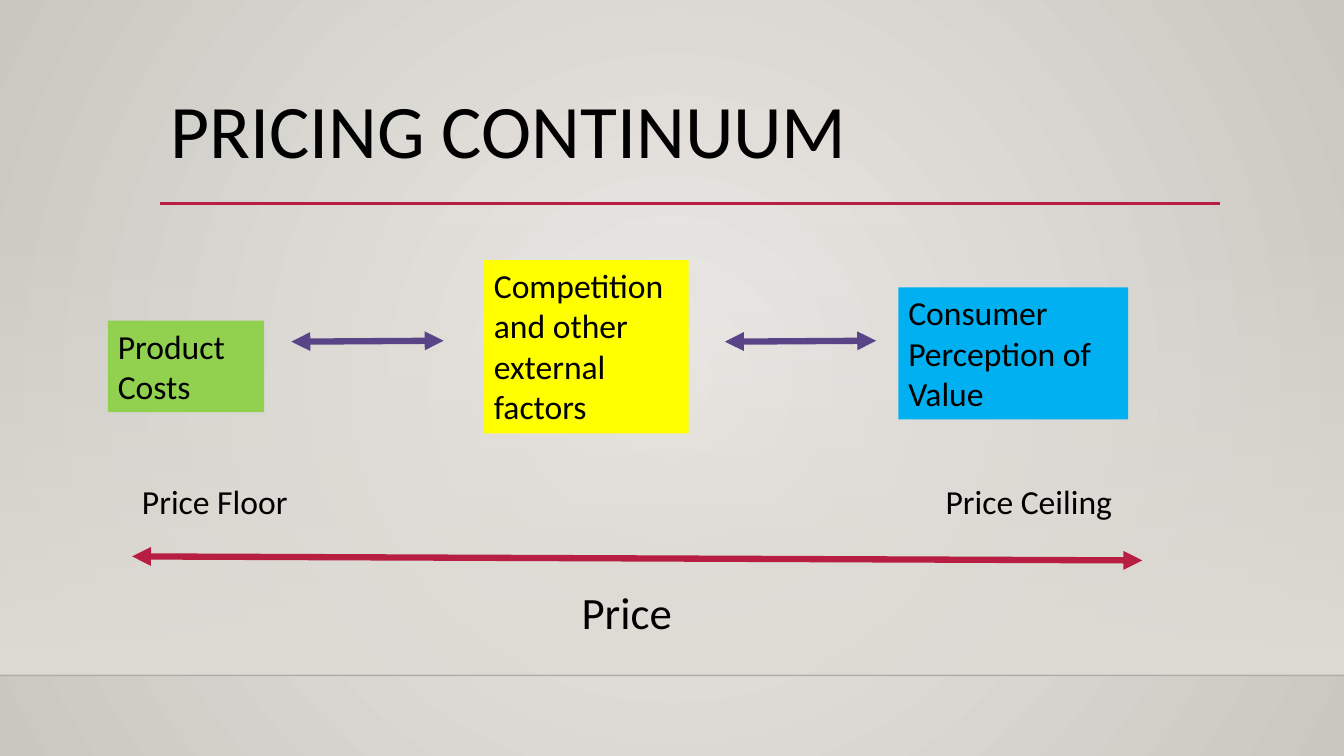
from dataclasses import dataclass

from lxml import etree
from pptx import Presentation
from pptx.dml.color import RGBColor as Rgb
from pptx.enum.shapes import MSO_CONNECTOR as Link, MSO_SHAPE as Kind
from pptx.enum.text import MSO_ANCHOR as Anchor, PP_ALIGN as Align
from pptx.oxml import parse_xml
from pptx.oxml.ns import nsdecls, qn
from pptx.util import Inches, Pt

WIDE, HIGH, FLOOR = 13.33, 7.5, 6.7
RED, PURPLE, BLACK = "B71E42", "594487", "000000"


@dataclass
class Label:
    text: str
    left: float
    top: float
    width: float
    height: float
    fill: str | None = None
    size: float = 24
    space: float = 1.0


@dataclass
class Line:
    start: tuple[float, float]
    end: tuple[float, float]
    color: str
    weight: float
    heads: bool = False
    alpha: int = 100


LABELS = [
    Label("PRICING CONTINUUM", 1.59, 0.88, 10.5, 1.15, size=54, space=0.9),
    Label("Product\nCosts", 1.07, 3.18, 1.55, 0.91, "92D050"),
    Label("Consumer\nPerception of\nValue", 8.91, 2.85, 2.28, 1.31, "00B0F0"),
    Label("Competition\nand other\nexternal\nfactors", 4.8, 2.58, 2.03, 1.72, "FFFF00"),
    Label("Price Floor", 1.31, 4.72, 1.72, 0.5),
    Label("Price Ceiling", 9.28, 4.72, 1.91, 0.5),
    Label("Price", 5.67, 5.75, 1.12, 0.64, size=32),
]
LINES = [
    Line((0, FLOOR), (WIDE, FLOOR), "000001", 1, alpha=20),
    Line((1.59, 2.02), (12.1, 2.02), RED, 2.5),
    Line((2.89, 3.39), (4.4, 3.38), PURPLE, 4.5, True),
    Line((7.19, 3.39), (8.69, 3.38), PURPLE, 4.5, True),
    Line((1.31, 5.52), (11.33, 5.56), RED, 4.5, True),
]


def color(code: str) -> Rgb:
    return Rgb.from_string(code)


def blend(owner, stops: list[tuple[str, int]], shade: str) -> None:
    marks = "".join(
        f'<a:gs pos="{pos}"><a:srgbClr val="{code}"><a:alpha val="{alpha * 1000}"/>'
        "</a:srgbClr></a:gs>"
        for pos, (code, alpha) in zip((0, 100000), stops)
    )
    grad = parse_xml(
        f'<a:gradFill {nsdecls("a")} rotWithShape="1"><a:gsLst>{marks}</a:gsLst>{shade}</a:gradFill>'
    )
    owner.replace(owner.find(qn("a:solidFill")), grad)


def block(slide, left: float, top: float, width: float, height: float, fill: str):
    shape = slide.shapes.add_shape(
        Kind.RECTANGLE, Inches(left), Inches(top), Inches(width), Inches(height)
    )
    shape.shadow.inherit = False
    shape.fill.solid()
    shape.fill.fore_color.rgb = color(fill)
    shape.line.fill.background()
    return shape


def write(frame, text: str, *, size: float, space: float = 1.0) -> None:
    frame.word_wrap = True
    frame.vertical_anchor = Anchor.TOP
    frame.text = text
    for para in frame.paragraphs:
        para.alignment = Align.LEFT
        para.line_spacing = space
        para.font.name = "Calibri"
        para.font.size = Pt(size)
        para.font.color.rgb = color(BLACK)


def place(slide, label: Label) -> None:
    area = label.left, label.top, label.width, label.height
    if label.fill:
        shape = block(slide, *area, label.fill)
    else:
        shape = slide.shapes.add_textbox(*map(Inches, area))
    write(shape.text_frame, label.text, size=label.size, space=label.space)


def draw(slide, line: Line) -> None:
    ends = map(Inches, line.start + line.end)
    link = slide.shapes.add_connector(Link.STRAIGHT, *ends)
    link.line.width = Pt(line.weight)
    link.line.color.rgb = color(line.color)
    props = link.element.spPr
    stroke = props.find(qn("a:ln"))
    if line.alpha < 100:
        tint = stroke.find(".//" + qn("a:srgbClr"))
        etree.SubElement(tint, qn("a:alpha"), val=str(line.alpha * 1000))
    if line.heads:
        for tag in ("a:headEnd", "a:tailEnd"):
            etree.SubElement(stroke, qn(tag), type="triangle")
    etree.SubElement(props, qn("a:effectLst"))


def paint(slide) -> None:
    back = slide.background.fill
    back.solid()
    back.fore_color.rgb = color("ECEAE7")
    blend(
        slide.element.find(".//" + qn("p:bgPr")),
        [("ECEAE7", 100), ("CAC7C1", 100)],
        '<a:path path="circle"><a:fillToRect l="50000" t="50000" r="50000" b="50000"/></a:path>',
    )
    wall = block(slide, 0, 2.21, WIDE, 4.49, "DFDBD5")
    blend(
        wall.element.spPr,
        [("DFDBD5", 0), ("DFDBD5", 100)],
        '<a:lin ang="5400000" scaled="0"/>',
    )


def main() -> None:
    deck = Presentation()
    deck.slide_width, deck.slide_height = Inches(WIDE), Inches(HIGH)
    slide = deck.slides.add_slide(deck.slide_layouts[6])
    paint(slide)
    for line in LINES:
        draw(slide, line)
    for label in LABELS:
        place(slide, label)
    deck.save("out.pptx")


if __name__ == "__main__":
    main()
